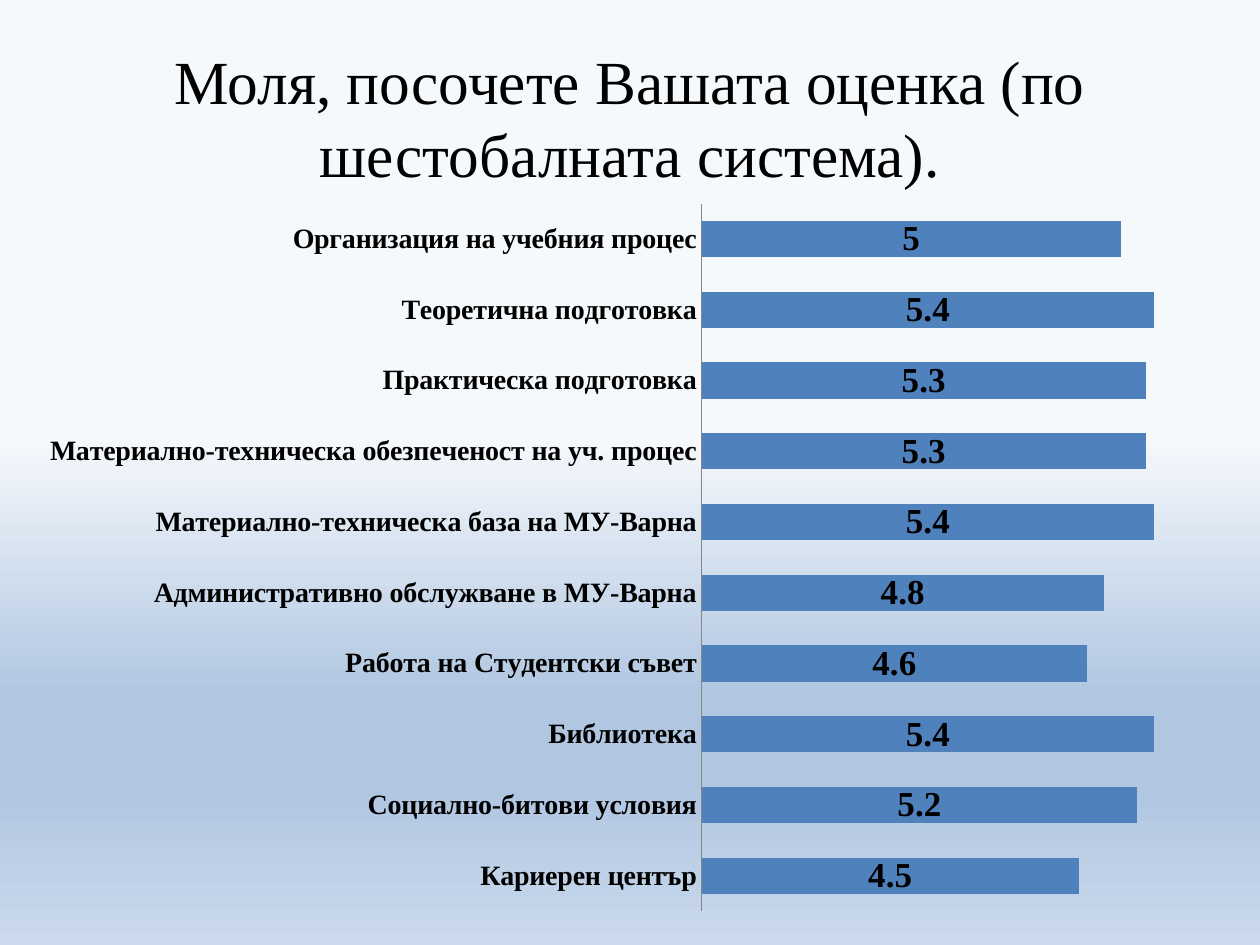
from typing import NamedTuple

import lxml.etree
import pptx
import pptx.chart.data
import pptx.dml.color
import pptx.enum.chart
import pptx.enum.text
import pptx.oxml
import pptx.oxml.ns
import pptx.util

WIDTH, HEIGHT = 10, 7.5
SERIF = "Times New Roman"
BLACK, BLUE, GREY = "000000", "4F81BD", "868686"
BACKGROUND_STOPS = [(46, "F6F9FC"), (74, "B0C6E1"), (83, "B0C6E1"), (100, "CAD9EB")]


class Box(NamedTuple):
    """Left, top, width and height as shares of the enclosing area."""
    x: float
    y: float
    w: float
    h: float


class Rating(NamedTuple):
    label: str
    score: float


TITLE_BOX = Box(0.05, 0.04, 0.9, 1 / 6)
CHART_BOX = Box(0.025, 0.2, 0.95, 0.78)
PLOT_BOX = Box(0.56, 0.02, 0.42, 0.96)

RATINGS = [
    Rating("Организация на учебния процес", 5),
    Rating("Теоретична подготовка", 5.4),
    Rating("Практическа подготовка", 5.3),
    Rating("Материално-техническа обезпеченост на уч. процес", 5.3),
    Rating("Материално-техническа база на МУ-Варна", 5.4),
    Rating("Административно обслужване в МУ-Варна", 4.8),
    Rating("Работа на Студентски съвет", 4.6),
    Rating("Библиотека", 5.4),
    Rating("Социално-битови условия", 5.2),
    Rating("Кариерен център", 4.5),
]


def rgb(color: str) -> pptx.dml.color.RGBColor:
    return pptx.dml.color.RGBColor.from_string(color)


def on_slide(box: Box) -> list[int]:
    shares = zip(box, (WIDTH, HEIGHT, WIDTH, HEIGHT))
    return [pptx.util.Inches(share * size) for share, size in shares]


def set_font(font, size: float, name: str = SERIF, bold: bool = False) -> None:
    font.size, font.name, font.bold = pptx.util.Pt(size), name, bold
    font.color.rgb = rgb(BLACK)


def paint_background(s) -> None:
    fill = s.background.fill
    fill.gradient()
    fill.gradient_angle = 270  # counter-clockwise, so top to bottom
    stops = s.element.find(".//" + pptx.oxml.ns.qn("a:gsLst"))
    for stop in list(stops):
        stops.remove(stop)
    for percent, color in BACKGROUND_STOPS:
        stops.append(pptx.oxml.parse_xml(
            f'<a:gs {pptx.oxml.ns.nsdecls("a")} pos="{percent * 1000}">'
            f'<a:srgbClr val="{color}"/></a:gs>'))


def write_title(s, text: str) -> None:
    sp = s.shapes.title
    sp.left, sp.top, sp.width, sp.height = on_slide(TITLE_BOX)
    tf = sp.text_frame
    tf.word_wrap = True
    tf.vertical_anchor = pptx.enum.text.MSO_ANCHOR.MIDDLE
    p = tf.paragraphs[0]
    p.alignment = pptx.enum.text.PP_ALIGN.CENTER
    r = p.add_run()
    r.text = text
    set_font(r.font, 35)


def place_plot(chart, box: Box) -> None:
    """Fix the inner plot area, leaving room for one-line category labels."""
    area = chart.element.find(".//" + pptx.oxml.ns.qn("c:plotArea"))
    for old in area.findall(pptx.oxml.ns.qn("c:layout")):
        area.remove(old)
    modes = '<c:xMode val="edge"/><c:yMode val="edge"/>'
    sizes = "".join(f'<c:{key} val="{value}"/>' for key, value in box._asdict().items())
    area.insert(0, pptx.oxml.parse_xml(
        f'<c:layout {pptx.oxml.ns.nsdecls("c")}><c:manualLayout>'
        f'<c:layoutTarget val="inner"/>{modes}{sizes}</c:manualLayout></c:layout>'))


def add_ratings_chart(s, ratings: list[Rating]) -> None:
    bottom_up = ratings[::-1]
    data = pptx.chart.data.CategoryChartData()
    data.categories = [rating.label for rating in bottom_up]
    data.add_series("Series 1", [rating.score for rating in bottom_up])
    kind = pptx.enum.chart.XL_CHART_TYPE.BAR_STACKED
    chart = s.shapes.add_chart(kind, *on_slide(CHART_BOX), data).chart
    chart.has_legend = chart.has_title = False
    set_font(chart.font, 18, "Calibri")
    place_plot(chart, PLOT_BOX)

    axis = chart.category_axis
    axis.major_tick_mark = pptx.enum.chart.XL_TICK_MARK.NONE
    axis.format.line.color.rgb = rgb(GREY)
    axis.format.line.width = pptx.util.Pt(0.75)
    set_font(axis.tick_labels.font, 16, bold=True)

    scale = chart.value_axis
    scale.minimum_scale, scale.maximum_scale = 0, 6
    scale.has_major_gridlines = False
    scale.visible = False

    plot = chart.plots[0]
    plot.gap_width, plot.overlap = 95, 100
    plot.vary_by_categories = False
    bars = plot.series[0]
    bars.format.fill.solid()
    bars.format.fill.fore_color.rgb = rgb(BLUE)
    labels = bars.data_labels
    labels.show_value = True
    labels.position = pptx.enum.chart.XL_LABEL_POSITION.CENTER
    set_font(labels.font, 20, bold=True)


def main() -> None:
    prs = pptx.Presentation()
    prs.slide_width, prs.slide_height = pptx.util.Inches(WIDTH), pptx.util.Inches(HEIGHT)
    s = prs.slides.add_slide(prs.slide_layouts.get_by_name("Title Only"))
    paint_background(s)
    write_title(s, "Моля, посочете Вашата оценка (по шестобалната система).")
    add_ratings_chart(s, RATINGS)
    prs.save("out.pptx")


if __name__ == "__main__":
    main()
